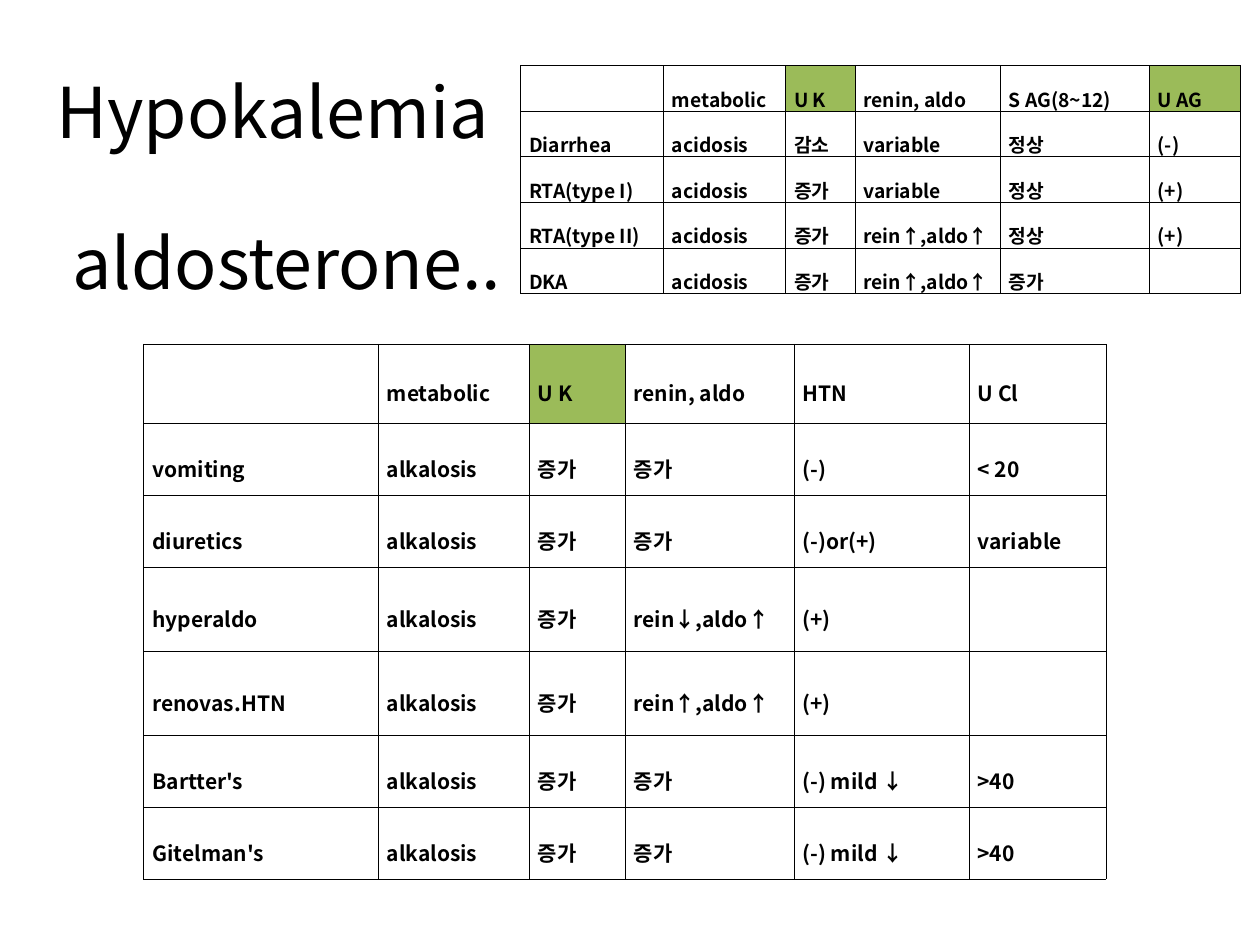
from dataclasses import dataclass

from pptx import Presentation
from pptx.dml.color import RGBColor as Color
from pptx.enum.text import MSO_ANCHOR as Anchor, PP_ALIGN as Align
from pptx.oxml.ns import qn
from pptx.util import Inches, Pt
from lxml.etree import SubElement


@dataclass(frozen=True)
class Theme:
    font: str = "Noto Sans CJK KR"
    ink: str = "000000"
    accent: str = "9BBB59"
    title_size: int = 40
    title_gap: int = 38
    acidosis_size: int = 11
    alkalosis_size: int = 12
    border: float = 0.28
    line_spacing: float = 1.6


THEME = Theme()
SLIDE_WIDTH, SLIDE_HEIGHT = Inches(10), Inches(7.5)

TITLE_LINES = ["Hypokalemia", " aldosterone.."]

ACIDOSIS_ROWS = [
    ["", "metabolic", "U K", "renin, aldo", "S AG(8~12)", "U AG"],
    ["Diarrhea", "acidosis", "감소", "variable", "정상", "(-)"],
    ["RTA(type I)", "acidosis", "증가", "variable", "정상", "(+)"],
    ["RTA(type II)", "acidosis", "증가", "rein↑,aldo↑", "정상", "(+)"],
    ["DKA", "acidosis", "증가", "rein↑,aldo↑", "증가", ""],
]

ALKALOSIS_ROWS = [
    ["", "metabolic", "U K", "renin, aldo", "HTN", "U Cl"],
    ["vomiting", "alkalosis", "증가", "증가", "(-)", "< 20"],
    ["diuretics", "alkalosis", "증가", "증가", "(-)or(+)", "variable"],
    ["hyperaldo", "alkalosis", "증가", "rein↓,aldo↑", "(+)", ""],
    ["renovas.HTN", "alkalosis", "증가", "rein↑,aldo↑", "(+)", ""],
    ["Bartter's", "alkalosis", "증가", "증가", "(-) mild ↓", ">40"],
    ["Gitelman's", "alkalosis", "증가", "증가", "(-) mild ↓", ">40"],
]


def percent_box(left, top, width, height):
    return (
        round(SLIDE_WIDTH * left / 100),
        round(SLIDE_HEIGHT * top / 100),
        round(SLIDE_WIDTH * width / 100),
        round(SLIDE_HEIGHT * height / 100),
    )


def set_values(target, values):
    for name, value in values.items():
        setattr(target, name, value)


def share_out(tracks, attribute, total, weights):
    for track, weight in zip(tracks, weights):
        setattr(track, attribute, round(total * weight / sum(weights)))


def write_span(para, text, size, bold=False):
    span = para.add_run()
    span.text = text
    set_values(span.font, {"name": THEME.font, "size": Pt(size), "bold": bold})
    span.font.color.rgb = Color.from_string(THEME.ink)
    properties = span.font._element
    SubElement(properties, qn("a:ea")).set("typeface", THEME.font)


def draw_borders(cell):
    properties = cell._tc.get_or_add_tcPr()
    for side in ("lnL", "lnR", "lnT", "lnB"):
        line = SubElement(properties, qn(f"a:{side}"), w=str(Pt(THEME.border)))
        fill = SubElement(line, qn("a:solidFill"))
        SubElement(fill, qn("a:srgbClr"), val=THEME.ink)


def fill_cell(cell, text, size, highlighted):
    set_values(cell, {
        "margin_left": Inches(0.07),
        "margin_right": Inches(0.07),
        "margin_top": Inches(0.02),
        "margin_bottom": Inches(0.02),
        "vertical_anchor": Anchor.MIDDLE,
    })
    draw_borders(cell)
    if highlighted:
        cell.fill.solid()
        cell.fill.fore_color.rgb = Color.from_string(THEME.accent)
    else:
        cell.fill.background()
    para = cell.text_frame.paragraphs[0]
    set_values(para, {"alignment": Align.JUSTIFY, "line_spacing": THEME.line_spacing})
    write_span(para, text, size, bold=True)


def place_title(page, box):
    frame = page.shapes.add_textbox(*box).text_frame
    set_values(frame, {"word_wrap": True, "vertical_anchor": Anchor.MIDDLE})
    first = frame.paragraphs[0]
    second = frame.add_paragraph()
    second.space_before = Pt(THEME.title_gap)
    for para, line in zip((first, second), TITLE_LINES):
        para.alignment = Align.LEFT
        write_span(para, line, THEME.title_size)


def place_table(page, box, rows, column_weights, row_weights, size, highlights):
    table = page.shapes.add_table(len(rows), len(column_weights), *box).table
    set_values(table, {"first_row": False, "horz_banding": False})
    share_out(table.columns, "width", box[2], column_weights)
    share_out(table.rows, "height", box[3], row_weights)
    for row_index, row in enumerate(rows):
        for column_index, text in enumerate(row):
            highlighted = row_index == 0 and text in highlights
            fill_cell(table.cell(row_index, column_index), text, size, highlighted)


def main():
    deck = Presentation()
    set_values(deck, {"slide_width": SLIDE_WIDTH, "slide_height": SLIDE_HEIGHT})
    page = deck.slides.add_slide(deck.slide_layouts[6])
    place_title(page, percent_box(3.5, 4, 90, 31.33))
    place_table(
        page, percent_box(11.4, 36.4, 76.4, 56.67), ALKALOSIS_ROWS,
        [186, 120, 76, 134, 139, 109], [63, 57, 57, 67, 67, 57, 57],
        THEME.alkalosis_size, {"U K"},
    )
    place_table(
        page, percent_box(41.3, 6.93, 57.1, 24.13), ACIDOSIS_ROWS,
        [113, 97, 55, 115, 118, 72], [1] * len(ACIDOSIS_ROWS),
        THEME.acidosis_size, {"U K", "U AG"},
    )
    deck.save("out.pptx")


if __name__ == "__main__":
    main()
